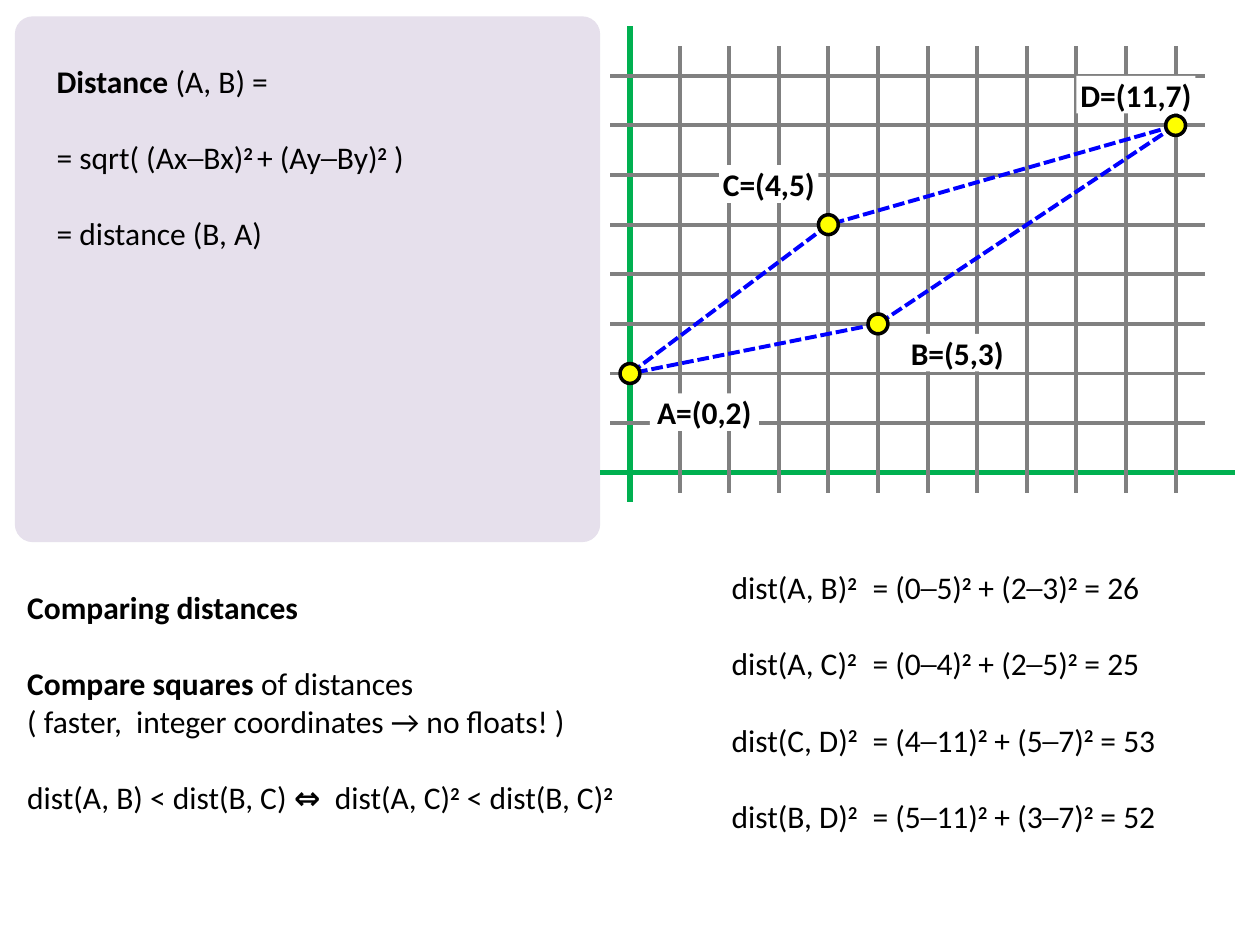
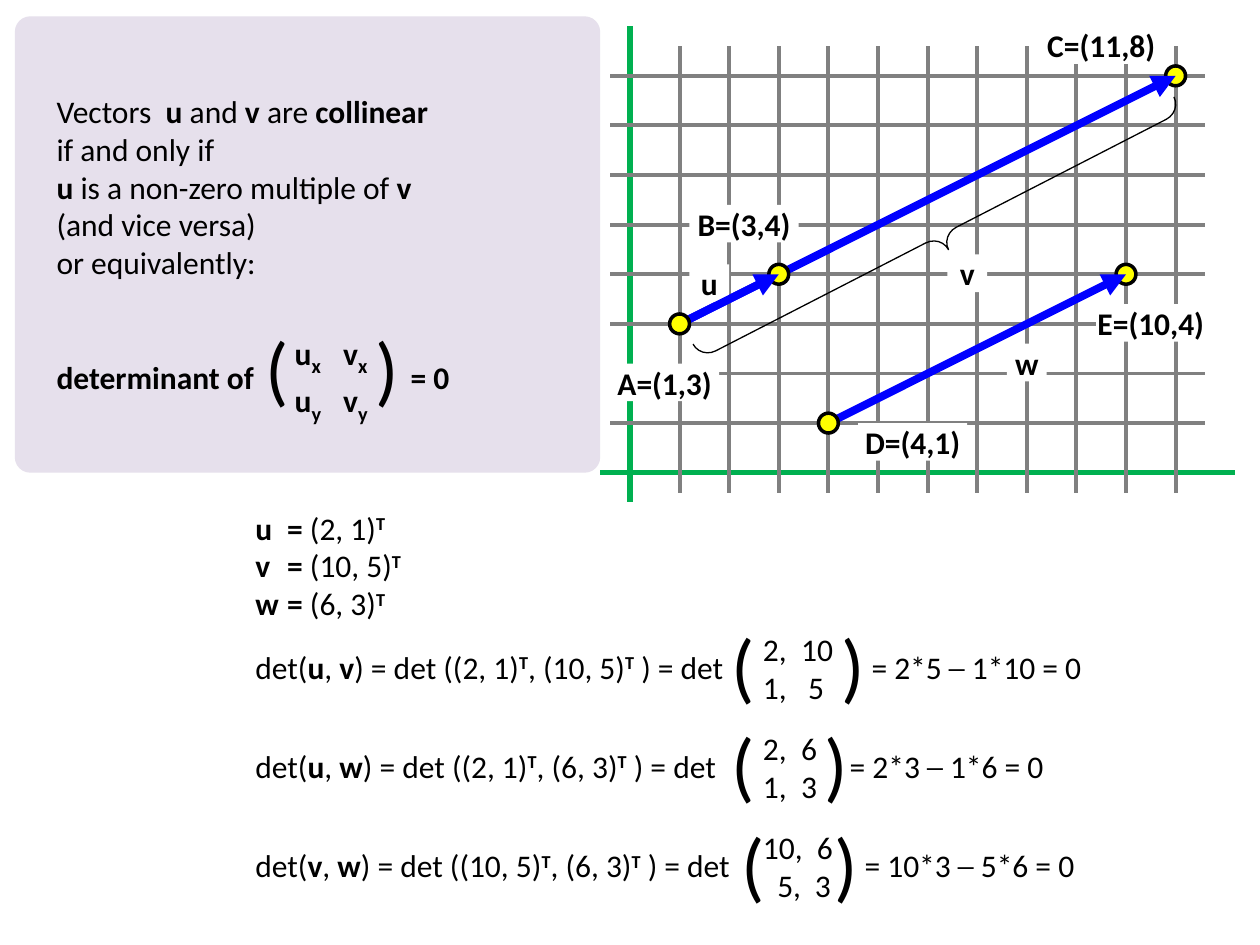
import dataclasses
import typing

import lxml.etree
import pptx
import pptx.dml.color
import pptx.enum.dml
import pptx.enum.shapes
import pptx.enum.text
import pptx.oxml.ns
import pptx.slide
import pptx.util

Cm = pptx.util.Cm
Pt = pptx.util.Pt
RGBColor = pptx.dml.color.RGBColor
ShapeKind = pptx.enum.shapes.MSO_SHAPE
qualified_name = pptx.oxml.ns.qn


@dataclasses.dataclass(frozen=True)
class Theme:
    font: str = "Calibri"
    ink: RGBColor = RGBColor(0, 0, 0)
    paper: RGBColor = RGBColor(255, 255, 255)
    panel: RGBColor = RGBColor(0xE6, 0xE0, 0xEC)
    grid: RGBColor = RGBColor(0x80, 0x80, 0x80)
    axis: RGBColor = RGBColor(0x00, 0xB0, 0x50)
    vector: RGBColor = RGBColor(0, 0, 255)
    point: RGBColor = RGBColor(255, 255, 0)
    body_size: float = 18
    subscript_size: float = 20
    bracket_size: float = 44
    blank_line: float = 22


THEME = Theme()
ORIGIN_X, ORIGIN_Y = 12.7, 9.53
COLUMNS, ROWS = 11, 8
POINT_SIZE = 0.4
LABEL_HEIGHT = 0.76
BASELINES = {"^": "30000", "_": "-25000"}


class Box(typing.NamedTuple):
    left: float
    top: float
    width: float
    height: float


class Position(typing.NamedTuple):
    x: float
    y: float


class Paragraph(typing.NamedTuple):
    markup: str
    tabs: tuple[float, ...] = ()
    blank_lines: int = 0


class Label(typing.NamedTuple):
    text: str
    x: float
    y: float
    width: float


class Determinant(typing.NamedTuple):
    equation: str
    result_tab: float
    bracket_left: float
    bracket_tab: float
    values: list[Paragraph]


def apply_format(target: typing.Any, values: dict[str, typing.Any]) -> None:
    for name, value in values.items():
        setattr(target, name, value)


def on_grid(position: Position) -> Position:
    return Position(ORIGIN_X + position.x, ORIGIN_Y - position.y)


def add_line(slide: pptx.slide.Slide, start: Position, end: Position, color: RGBColor,
             width: float, dashed: bool = False, arrow: bool = False) -> None:
    begin, finish = on_grid(start), on_grid(end)
    connector = slide.shapes.add_connector(
        pptx.enum.shapes.MSO_CONNECTOR.STRAIGHT, *map(Cm, begin + finish))
    connector.line.color.rgb = color
    connector.line.width = Pt(width)
    if dashed:
        connector.line.dash_style = pptx.enum.dml.MSO_LINE.SQUARE_DOT
    properties = connector._element.spPr
    if arrow:
        outline = properties.find(qualified_name("a:ln"))
        lxml.etree.SubElement(outline, qualified_name("a:tailEnd"), type="triangle")
    lxml.etree.SubElement(properties, qualified_name("a:effectLst"))


def add_filled_shape(slide: pptx.slide.Slide, kind: ShapeKind, box: Box,
                     fill: RGBColor | None, outline: float = 0) -> typing.Any:
    shape = slide.shapes.add_shape(kind, *map(Cm, box))
    shape.shadow.inherit = False
    if fill is None:
        shape.fill.background()
    else:
        shape.fill.solid()
        shape.fill.fore_color.rgb = fill
    if outline:
        shape.line.color.rgb = THEME.ink
        shape.line.width = Pt(outline)
    else:
        shape.line.fill.background()
    return shape


def add_run(paragraph: typing.Any, text: str, size: float, bold: bool, script: str) -> None:
    run = paragraph.add_run()
    run.text = text
    run_size = THEME.subscript_size if script == "_" else size
    apply_format(run.font, {"name": THEME.font, "size": Pt(run_size),
                            "bold": bold or bool(script)})
    run.font.color.rgb = THEME.ink
    if script:
        run.font._element.set("baseline", BASELINES[script])


def write_markup(paragraph: typing.Any, markup: str, size: float) -> None:
    text, bold, script = "", False, ""
    for character in markup:
        if character not in "~^_":
            text += character
            continue
        if text:
            add_run(paragraph, text, size, bold, script)
        text = ""
        if character == "~":
            bold = not bold
        else:
            script = "" if script else character
    if text:
        add_run(paragraph, text, size, bold, script)


def add_text(slide: pptx.slide.Slide, box: Box, paragraphs: list[Paragraph],
             size: float = THEME.body_size) -> None:
    frame = slide.shapes.add_textbox(*map(Cm, box)).text_frame
    frame.word_wrap = True
    for index, content in enumerate(paragraphs):
        paragraph = frame.add_paragraph() if index else frame.paragraphs[0]
        paragraph.space_before = Pt(content.blank_lines * THEME.blank_line)
        if content.tabs:
            properties = paragraph._p.get_or_add_pPr()
            tab_list = lxml.etree.SubElement(properties, qualified_name("a:tabLst"))
            for tab in content.tabs:
                lxml.etree.SubElement(tab_list, qualified_name("a:tab"),
                                      pos=str(int(Cm(tab))), algn="l")
        write_markup(paragraph, content.markup, size)


def add_brackets(slide: pptx.slide.Slide, left: float, top: float, tab: float) -> None:
    add_text(slide, Box(left, top, 3.8, 2.13), [Paragraph("(\t)", (tab,))],
             THEME.bracket_size)


def add_label(slide: pptx.slide.Slide, label: Label) -> None:
    corner = on_grid(Position(label.x, label.y))
    box = Box(corner.x, corner.y, label.width, LABEL_HEIGHT)
    frame = add_filled_shape(slide, ShapeKind.RECTANGLE, box, THEME.paper).text_frame
    apply_format(frame, {"margin_left": 0, "margin_right": 0, "margin_top": 0,
                         "margin_bottom": 0, "word_wrap": True,
                         "vertical_anchor": pptx.enum.text.MSO_ANCHOR.MIDDLE})
    paragraph = frame.paragraphs[0]
    paragraph.alignment = pptx.enum.text.PP_ALIGN.CENTER
    write_markup(paragraph, f"~{label.text}~", THEME.body_size)


def add_point(slide: pptx.slide.Slide, position: Position) -> None:
    center = on_grid(position)
    box = Box(center.x - POINT_SIZE / 2, center.y - POINT_SIZE / 2, POINT_SIZE, POINT_SIZE)
    add_filled_shape(slide, ShapeKind.OVAL, box, THEME.point, 2)


def add_vector(slide: pptx.slide.Slide, start: Position, end: Position) -> None:
    add_line(slide, start, end, THEME.vector, 4.5, arrow=True)


def add_base_slide(presentation: typing.Any, panel_height: float) -> pptx.slide.Slide:
    slide = presentation.slides.add_slide(presentation.slide_layouts[6])
    panel = add_filled_shape(slide, ShapeKind.ROUNDED_RECTANGLE,
                             Box(0.3, 0.33, 11.8, panel_height), THEME.panel)
    panel.adjustments[0] = 0.034
    add_line(slide, Position(-0.6, 0), Position(12.2, 0), THEME.axis, 3)
    add_line(slide, Position(0, 9), Position(0, -0.6), THEME.axis, 3)
    for x in range(1, COLUMNS + 1):
        add_line(slide, Position(x, 8.6), Position(x, -0.4), THEME.grid, 2.25)
    for y in range(1, ROWS + 1):
        add_line(slide, Position(-0.4, y), Position(11.6, y), THEME.grid, 2.25)
    return slide


def build_distance_slide(presentation: typing.Any) -> None:
    slide = add_base_slide(presentation, 10.6)
    a, b, c, d = Position(0, 2), Position(5, 3), Position(4, 5), Position(11, 7)
    for label in (Label("A=(0,2)", 0.4, 1.6, 2.2), Label("B=(5,3)", 5.6, 2.8, 2),
                  Label("C=(4,5)", 1.8, 6.2, 2), Label("D=(11,7)", 9, 8, 2.4)):
        add_label(slide, label)
    add_text(slide, Box(0.89, 1.12, 10, 4.88), [
        Paragraph("~Distance ~(A, B) ="),
        Paragraph("= sqrt( (Ax─Bx)^2 ^+ (Ay─By)^2^ )", blank_lines=1),
        Paragraph("= distance (B, A)", blank_lines=1)])
    add_text(slide, Box(0.3, 11.73, 13.2, 4.88), [
        Paragraph("~Comparing distances~"),
        Paragraph("~Compare squares~ of distances", blank_lines=1),
        Paragraph("( faster,  integer coordinates → no floats! )"),
        Paragraph("dist(A, B) < dist(B, C) ~⇔  ~dist(A, C)^2^ < dist(B, C)^2^", blank_lines=1)])
    squares = ["dist(A, B)^2^\t= (0─5)^2^ + (2─3)^2^ = 26",
               "dist(A, C)^2^\t= (0─4)^2^ + (2─5)^2^ = 25",
               "dist(C, D)^2^\t= (4─11)^2^ + (5─7)^2^ = 53",
               "dist(B, D)^2^\t= (5─11)^2^ + (3─7)^2^ = 52"]
    add_text(slide, Box(14.5, 11.33, 9.6, 5.64),
             [Paragraph(square, (2.84,), min(index, 1)) for index, square in enumerate(squares)])
    for start, end in ((c, a), (b, a), (d, b), (d, c)):
        add_line(slide, start, end, THEME.vector, 2.25, dashed=True)
    for position in (a, b, c, d):
        add_point(slide, position)


def draw_collinear_vectors(slide: pptx.slide.Slide) -> None:
    a, b, c = Position(1, 3), Position(3, 4), Position(11, 8)
    d, e = Position(4, 1), Position(10, 4)
    for label in (Label("A=(1,3)", -0.4, 2.2, 2.2), Label("B=(3,4)", 1.2, 5.4, 2.2),
                  Label("C=(11,8)", 8.4, 9, 2.2), Label("D=(4,1)", 4.6, 1, 2.2),
                  Label("E=(10,4)", 9.4, 3.4, 2.2), Label("v", 6.4, 4.4, 0.8),
                  Label("w", 7.6, 2.6, 0.8)):
        add_label(slide, label)
    add_point(slide, c)
    add_vector(slide, a, c)
    add_point(slide, b)
    add_point(slide, e)
    add_vector(slide, d, e)
    add_point(slide, d)
    add_label(slide, Label("u", 1.2, 4.2, 0.8))
    add_vector(slide, a, b)
    add_point(slide, a)
    brace = add_filled_shape(slide, ShapeKind.RIGHT_BRACE,
                             Box(18.64, -0.71, 0.66, 10.9), None, 0.75)
    brace.adjustments[0] = 0.524
    brace.rotation = 62.8


def build_collinear_slide(presentation: typing.Any) -> None:
    slide = add_base_slide(presentation, 9.2)
    draw_collinear_vectors(slide)
    add_text(slide, Box(0.89, 1.73, 9.8, 7.19), [
        Paragraph("Vectors ~ u ~and~ v ~are~ collinear~"),
        Paragraph("if and only if"),
        Paragraph("~u ~is a non-zero multiple of~ v~"),
        Paragraph("(and vice versa)"),
        Paragraph("or equivalently:"),
        Paragraph("~determinant of\t= 0~", (7.14,), 2)])
    add_text(slide, Box(5.69, 6.53, 2.2, 1.88),
             [Paragraph(f"~u_{axis}_\tv_{axis}_~", (0.98,)) for axis in "xy"])
    add_brackets(slide, 5.1, 6.33, 2.22)
    vectors = {"u": "(2, 1)", "v": "(10, 5)", "w": "(6, 3)"}
    add_text(slide, Box(4.9, 10.13, 5.2, 2.57),
             [Paragraph(f"~{name}\t= ~{value}^T^", (0.64,)) for name, value in vectors.items()])
    determinants = [
        Determinant("det(~u~, ~v~) = det ((2, 1)^T^, (10, 5)^T^ ) = det\t= 2*5 ─ 1*10 = 0",
                    12.42, 14.5, 2.22,
                    [Paragraph("2,\t10", (0.77,)), Paragraph("1,\t5", (0.91,))]),
        Determinant("det(~u~, ~w~) = det ((2, 1)^T^, (6, 3)^T^ ) = det\t= 2*3 ─ 1*6 = 0",
                    11.98, 14.5, 1.87,
                    [Paragraph("2,\t6", (0.77,)), Paragraph("1,\t3", (0.77,))]),
        Determinant("det(~v~, ~w~) = det ((10, 5)^T^, (6, 3)^T^ ) = det\t= 10*3 ─ 5*6 = 0",
                    12.28, 14.7, 1.87,
                    [Paragraph("10,\t6", (1.09,)), Paragraph("\t5,\t3", (0.29, 1.05))])]
    for index, determinant in enumerate(determinants):
        top = 12.93 + 2 * index
        add_text(slide, Box(4.9, top, 17.8, 1.02),
                 [Paragraph(determinant.equation, (determinant.result_tab,))])
        add_brackets(slide, determinant.bracket_left, top - 0.6, determinant.bracket_tab)
        add_text(slide, Box(15.13, top - 0.36, 3.2, 1.8), determinant.values)


def main() -> None:
    presentation = pptx.Presentation()
    apply_format(presentation, {"slide_width": Cm(25.4), "slide_height": Cm(19.05)})
    build_distance_slide(presentation)
    build_collinear_slide(presentation)
    presentation.save("out.pptx")


if __name__ == "__main__":
    main()
